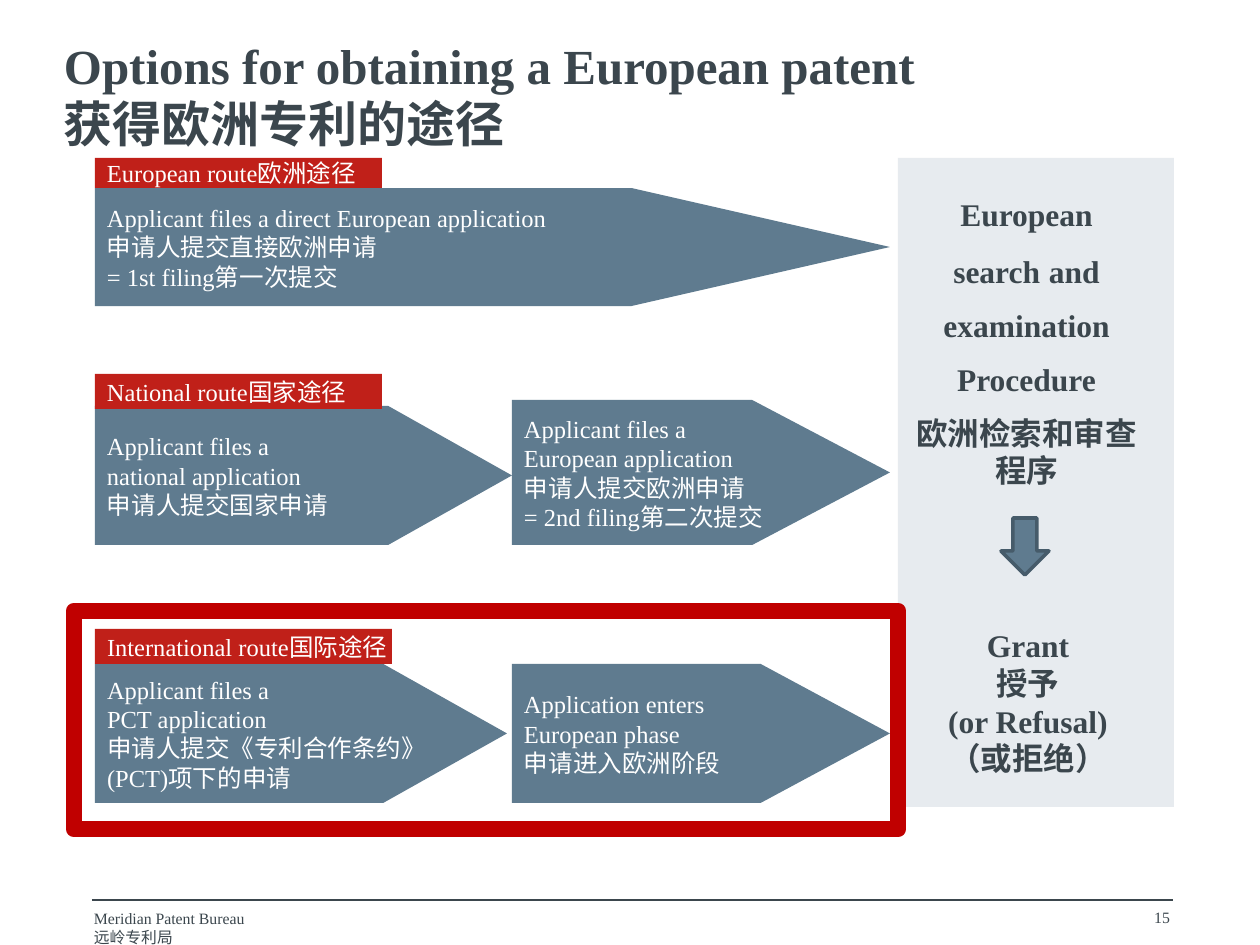
from dataclasses import dataclass

from lxml import etree
from pptx import Presentation
from pptx.dml.color import RGBColor
from pptx.enum.shapes import MSO_CONNECTOR, MSO_SHAPE
from pptx.enum.text import MSO_ANCHOR, MSO_AUTO_SIZE, PP_ALIGN
from pptx.oxml.ns import qn
from pptx.util import Emu, Pt

RECT, PLATE, DOWN = MSO_SHAPE.RECTANGLE, MSO_SHAPE.PENTAGON, MSO_SHAPE.DOWN_ARROW
TOP, MIDDLE = MSO_ANCHOR.TOP, MSO_ANCHOR.MIDDLE
LEFT, CENTER, RIGHT = PP_ALIGN.LEFT, PP_ALIGN.CENTER, PP_ALIGN.RIGHT
STRAIGHT, NO_FIT = MSO_CONNECTOR.STRAIGHT, MSO_AUTO_SIZE.NONE
SCALE = 914400 / 126


@dataclass(frozen=True)
class Theme:
    font: str = "Times New Roman"
    ink: str = "3B464D"
    soft: str = "404B56"
    white: str = "FFFFFF"
    steel: str = "5F7B8F"
    edge: str = "465B6A"
    red: str = "C02019"
    frame: str = "C00000"
    panel: str = "C1CCD5"
    title: int = 28
    head: int = 18
    gap: int = 20
    body: int = 14
    foot: int = 9


THEME = Theme()

# left, top, width, height, point length over height, lines
PLATES = [
    (95, 188, 795, 118, 2.19, ["Applicant files a direct European application",
                               "申请人提交直接欧洲申请", "= 1st filing第一次提交"]),
    (95, 406, 417, 139, 0.89, ["Applicant files a", "national application",
                               "申请人提交国家申请"]),
    (95, 664, 412, 139, 0.89, ["Applicant files a", "PCT application",
                               "申请人提交《专利合作条约》", "(PCT)项下的申请"]),
    (512, 400, 378, 145, 0.95, ["Applicant files a", "European application",
                                "申请人提交欧洲申请", "= 2nd filing第二次提交"]),
    (512, 664, 378, 139, 0.93, ["Application enters", "European phase",
                                "申请进入欧洲阶段"]),
]

# top, width, height, label
TAGS = [
    (158, 287, 30, "European route欧洲途径"),
    (374, 287, 35, "National route国家途径"),
    (629, 297, 35, "International route国际途径"),
]


def px(num):
    return Emu(round(num * SCALE))


def rgb(code):
    return RGBColor.from_string(code)


def add_run(para, text, size, color, bold=False):
    run = para.add_run()
    run.text = text
    font = run.font
    font.name, font.size, font.bold = THEME.font, Pt(size), bold
    font.color.rgb = rgb(color)


def set_text(frame, lines, size, color, bold=False, align=LEFT, anchor=TOP,
             inset=(0, 0, 0, 0), wrap=True, before=0):
    """Fill a frame; a line is a string or a list of (text, size, color, bold)."""
    frame.auto_size = NO_FIT
    frame.word_wrap = wrap
    frame.vertical_anchor = anchor
    (frame.margin_left, frame.margin_top,
     frame.margin_right, frame.margin_bottom) = map(px, inset)
    for i, line in enumerate(lines):
        para = frame.add_paragraph() if i else frame.paragraphs[0]
        para.alignment = align
        para.space_before = Pt(before)
        runs = [(line, size, color, bold)] if isinstance(line, str) else line
        for run in runs:
            add_run(para, *run)


def add_box(slide, kind, box, fill=None, line=None, width=0):
    shape = slide.shapes.add_shape(kind, *map(px, box))
    shape.shadow.inherit = False
    if fill:
        shape.fill.solid()
        shape.fill.fore_color.rgb = rgb(fill)
    else:
        shape.fill.background()
    if line:
        shape.line.color.rgb = rgb(line)
        shape.line.width = Pt(width)
    else:
        shape.line.fill.background()
    return shape


def add_label(slide, kind, box, fill, lines):
    shape = add_box(slide, kind, box, fill)
    set_text(shape.text_frame, lines, THEME.body, THEME.white,
             anchor=MIDDLE, inset=(12, 0, 0, 0), wrap=False)
    return shape


def add_note(slide, box, lines, size, **style):
    note = slide.shapes.add_textbox(*map(px, box))
    set_text(note.text_frame, lines, size, THEME.ink, **style)


def add_title(slide):
    title = slide.shapes.title
    title.left, title.top, title.width, title.height = map(px, (64, 35, 1150, 74))
    set_text(title.text_frame,
             ["Options for obtaining a European patent", "获得欧洲专利的途径"],
             THEME.title, THEME.ink, bold=True)


def add_panel(slide):
    panel = add_box(slide, RECT, (898, 158, 276, 649), THEME.panel)
    tint = panel.fill._xPr.find(".//" + qn("a:srgbClr"))
    etree.SubElement(tint, qn("a:alpha"), val="38000")

    pair = [("search", THEME.head, THEME.ink, True),
            (" ", THEME.gap, THEME.soft, False),
            ("and", THEME.head, THEME.ink, True)]
    add_note(slide, (900, 195, 247, 311),
             ["European", pair, "examination", "Procedure", "欧洲检索和审查程序"],
             THEME.head, bold=True, align=CENTER, inset=(6, 0, 0, 0), before=9)
    add_note(slide, (904, 620, 248, 168),
             ["Grant", "授予", "(or Refusal)", "（或拒绝）"],
             THEME.head, bold=True, align=CENTER, inset=(13, 6, 13, 6))
    add_box(slide, DOWN, (1001, 518, 48, 57), THEME.steel, THEME.edge, 2)


def add_footer(slide):
    rule = slide.shapes.add_connector(STRAIGHT, *map(px, (92, 900, 1173, 900)))
    rule.line.color.rgb = rgb(THEME.ink)
    rule.line.width = Pt(0.75)
    etree.SubElement(rule.line._get_or_add_ln().getparent(), qn("a:effectLst"))
    add_note(slide, (94, 909, 214, 32), ["Meridian Patent Bureau", "远岭专利局"],
             THEME.foot)
    add_note(slide, (922, 908, 248, 30), ["15"], THEME.foot, align=RIGHT)


def main():
    deck = Presentation()
    deck.slide_width, deck.slide_height = px(1260), px(945)
    slide = deck.slides.add_slide(deck.slide_layouts[5])
    add_footer(slide)
    add_title(slide)
    for *box, point, lines in PLATES:
        plate = add_label(slide, PLATE, box, THEME.steel, lines)
        plate.adjustments[0] = point
    add_panel(slide)
    for top, width, height, label in TAGS:
        add_label(slide, RECT, (95, top, width, height), THEME.red, [label])
    add_box(slide, RECT, (74, 611, 824, 218), line=THEME.frame, width=9.5)
    deck.save("out.pptx")


if __name__ == "__main__":
    main()
